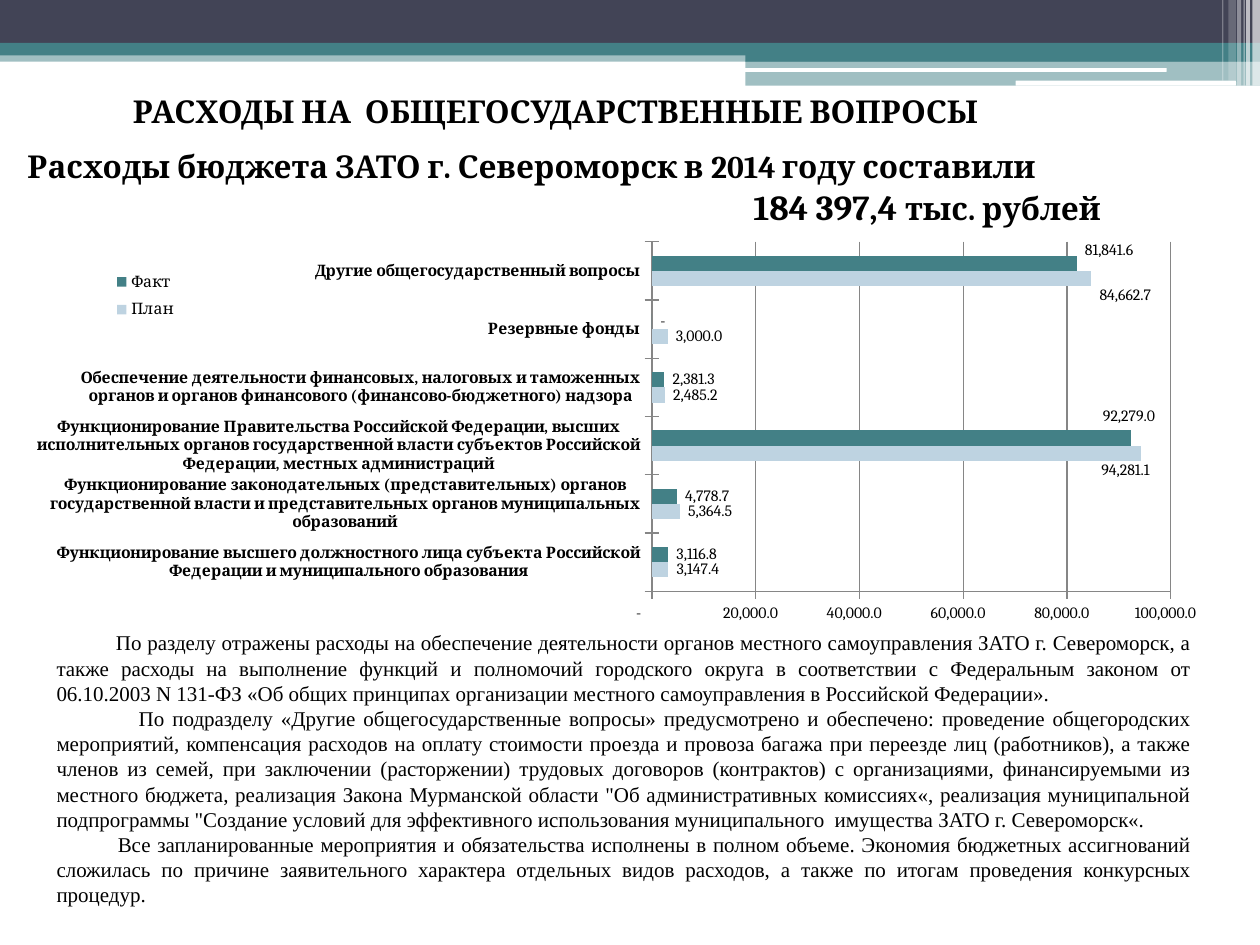
from typing import NamedTuple

from lxml import etree
from pptx import Presentation
from pptx.chart.data import CategoryChartData
from pptx.dml.color import RGBColor
from pptx.enum.chart import XL_CHART_TYPE, XL_LABEL_POSITION, XL_LEGEND_POSITION, XL_TICK_MARK
from pptx.enum.shapes import MSO_SHAPE
from pptx.enum.text import MSO_ANCHOR, PP_ALIGN
from pptx.oxml import parse_xml
from pptx.oxml.ns import nsdecls, qn
from pptx.util import Pt

RECT, ROUND = MSO_SHAPE.RECTANGLE, MSO_SHAPE.ROUNDED_RECTANGLE
LEFT, CENTER, RIGHT, JUSTIFY = PP_ALIGN.LEFT, PP_ALIGN.CENTER, PP_ALIGN.RIGHT, PP_ALIGN.JUSTIFY
CROSS, OUTSIDE = XL_TICK_MARK.CROSS, XL_TICK_MARK.OUTSIDE
OUTSIDE_END = XL_LABEL_POSITION.OUTSIDE_END
COLORS = {"navy": "424456", "teal": "438086", "pale": "BED3E1", "white": "FFFFFF",
          "black": "000000", "grid": "868686"}
SERIF, BODY = "Cambria", "Times New Roman"
NUMBER = '_-* #,##0.0_р_._-;\\-* #,##0.0_р_._-;_-* "-"??_р_._-;_-@_-'


class Band(NamedTuple):
    x: float
    y: float
    w: float
    h: float
    color: str
    alpha: int = 100
    kind: int = RECT


class Series(NamedTuple):
    name: str
    color: str
    values: tuple
    label_shifts: dict  # point index -> shift as a share of the chart


class BodyText(NamedTuple):
    indent: float
    text: str


BANDS = [
    Band(0, 28.8, 720, 6.5, "teal", 50),
    Band(0, 0, 720, 24.5, "navy"),
    Band(0, 24.5, 720, 7.2, "teal"),
    Band(426, 28.1, 294, 7.2, "teal"),
    Band(426, 34.6, 294, 14.4, "teal", 50),
    Band(425.5, 38.9, 241.2, 2.2, "white", 100, ROUND),
    Band(580.3, 46.1, 126, 2.9, "white", 100, ROUND),
    # Light stripes in the corner
    Band(715.7, 0, 4.3, 49, "white", 65),
    Band(712.1, 0, 2.2, 49, "white", 65),
    Band(710.6, 0, 0.7, 49, "white", 60),
    Band(707, 0, 2.2, 49, "white", 40),
    Band(702, 0, 4.3, 46.1, "white", 20),
    Band(698.4, 0, 0.7, 46.1, "white", 30),
]
CATEGORIES = [
    "Функционирование высшего должностного лица субъекта Российской Федерации и муниципального образования",
    "Функционирование законодательных (представительных) органов государственной власти "
    "и представительных органов муниципальных образований",
    "Функционирование Правительства Российской Федерации, высших исполнительных органов "
    "государственной власти субъектов Российской Федерации, местных администраций",
    "Обеспечение деятельности финансовых, налоговых и таможенных органов и органов "
    "финансового (финансово-бюджетного) надзора",
    "Резервные фонды",
    "Другие общегосударственный вопросы",
]
SERIES = [
    Series("План", "pale", (3147.4, 5364.5, 94281.1, 2485.2, 3000, 84662.7),
           {2: (-0.04, 0.04), 5: (0, 0.04)}),
    Series("Факт", "teal", (3116.8, 4778.7, 92279, 2381.3, 0, 81841.6),
           {2: (-0.03, -0.05), 5: (0, -0.03)}),
]
BODY_TEXTS = [
    BodyText(34, "По разделу отражены расходы на обеспечение деятельности органов местного самоуправления "
             "ЗАТО г. Североморск, а также расходы на выполнение функций и полномочий городского округа "
             "в соответствии с Федеральным законом от 06.10.2003 N 131-ФЗ «Об общих принципах организации "
             "местного самоуправления в Российской Федерации»."),
    BodyText(47, "По подразделу «Другие общегосударственные вопросы» предусмотрено и обеспечено: проведение "
             "общегородских мероприятий, компенсация расходов на оплату стоимости проезда и провоза багажа "
             "при переезде лиц (работников), а также членов из семей, при заключении (расторжении) трудовых "
             "договоров (контрактов) с организациями, финансируемыми из местного бюджета, реализация Закона "
             "Мурманской области \"Об административных комиссиях«, реализация муниципальной подпрограммы "
             "\"Создание условий для эффективного использования муниципального  имущества ЗАТО г. Североморск«."),
    BodyText(35, "Все запланированные мероприятия и обязательства исполнены в полном объеме. Экономия бюджетных "
             "ассигнований сложилась по причине заявительного характера отдельных видов расходов, а также "
             "по итогам проведения конкурсных процедур."),
]


def rgb(name: str) -> RGBColor:
    return RGBColor.from_string(COLORS[name])


def draw_band(s, b: Band):
    sp = s.shapes.add_shape(b.kind, Pt(b.x), Pt(b.y), Pt(b.w), Pt(b.h))
    sp.shadow.inherit = False
    sp.fill.solid()
    sp.fill.fore_color.rgb = rgb(b.color)
    sp.line.fill.background()
    if b.alpha < 100:
        color = sp.fill._xPr.find(f".//{qn('a:srgbClr')}")
        etree.SubElement(color, qn("a:alpha"), val=str(b.alpha * 1000))
    return sp


def set_font(font, size: float, bold: bool = False, name: str = SERIF) -> None:
    font.name, font.size, font.bold = name, Pt(size), bold
    font.color.rgb = rgb("black")


def add_run(p, text: str, size: float, bold: bool = True, name: str = SERIF) -> None:
    r = p.add_run()
    r.text = text
    set_font(r.font, size, bold, name)


def add_textbox(s, x: float, y: float, w: float, h: float):
    tf = s.shapes.add_textbox(Pt(x), Pt(y), Pt(w), Pt(h)).text_frame
    tf.word_wrap = True
    return tf


def layout_xml(x: float, y: float, size: tuple = (), inner: bool = False, edge: bool = True):
    parts = ['<c:layoutTarget val="inner"/>'] if inner else []
    if edge:
        parts.append('<c:xMode val="edge"/><c:yMode val="edge"/>')
    values = zip("xywh", (x, y, *size))
    parts += [f'<c:{tag} val="{value}"/>' for tag, value in values]
    return parse_xml(f'<c:layout {nsdecls("c")}><c:manualLayout>{"".join(parts)}</c:manualLayout></c:layout>')


def put_layout(parent, after: str | None, layout) -> None:
    for old in parent.findall(qn("c:layout")):
        parent.remove(old)
    parent.insert(0 if after is None else parent.index(parent.find(qn(after))) + 1, layout)


def style_series(ser, spec: Series) -> None:
    ser.format.fill.solid()
    ser.format.fill.fore_color.rgb = rgb(spec.color)
    ser.invert_if_negative = False
    labels = ser.data_labels
    labels.show_value, labels.position = True, OUTSIDE_END
    labels.number_format, labels.number_format_is_linked = NUMBER, False
    set_font(labels.font, 9)
    for i, (dx, dy) in spec.label_shifts.items():
        label = ser.points[i].data_label
        set_font(label.font, 9)
        label.position = OUTSIDE_END
        d_lbl = ser._element.xpath(f'c:dLbls/c:dLbl[c:idx/@val="{i}"]')[0]
        put_layout(d_lbl, "c:idx", layout_xml(dx, dy, edge=False))
        num_fmt = etree.Element(qn("c:numFmt"), formatCode=NUMBER, sourceLinked="0")
        d_lbl.find(qn("c:layout")).addnext(num_fmt)


def draw_chart(s) -> None:
    data = CategoryChartData(number_format=NUMBER)
    data.categories = CATEGORIES
    for spec in SERIES:
        data.add_series(spec.name, spec.values)
    chart = s.shapes.add_chart(XL_CHART_TYPE.BAR_CLUSTERED, Pt(14.4), Pt(131), Pt(686.2), Pt(245.5), data).chart
    set_font(chart.font, 18)
    chart.has_title = False
    plot = chart.plots[0]
    plot.gap_width, plot.vary_by_categories = 184, False
    for ser, spec in zip(plot.series, SERIES):
        style_series(ser, spec)
    # Axes
    cat, val = chart.category_axis, chart.value_axis
    cat.major_tick_mark, val.major_tick_mark = CROSS, OUTSIDE
    set_font(cat.tick_labels.font, 9, True)
    set_font(val.tick_labels.font, 9)
    val.minimum_scale, val.maximum_scale, val.major_unit = 0, 100000, 20000
    val.tick_labels.number_format, val.tick_labels.number_format_is_linked = NUMBER, False
    val.has_major_gridlines = True
    for part in (cat, val, val.major_gridlines):
        part.format.line.color.rgb = rgb("grid")
        part.format.line.width = Pt(0.75)
    # Legend and plot area
    chart.has_legend = True
    legend = chart.legend
    legend.position, legend.include_in_layout = XL_LEGEND_POSITION.RIGHT, False
    set_font(legend.font, 9)
    put_layout(legend._element, "c:legendPos", layout_xml(0.06, 0.08, (0.08, 0.15)))
    plot_area = chart._chartSpace.chart.plotArea
    put_layout(plot_area, None, layout_xml(0.522, 0.029, (0.432, 0.814), inner=True))


def main() -> None:
    prs = Presentation()
    prs.slide_width, prs.slide_height = Pt(720), Pt(540)
    s = prs.slides.add_slide(prs.slide_layouts[6])
    for band in BANDS:
        draw_band(s, band)
    # Title
    p = add_textbox(s, 14.4, 49, 606.2, 28.8).paragraphs[0]
    p.alignment = CENTER
    add_run(p, "РАСХОДЫ НА  ОБЩЕГОСУДАРСТВЕННЫЕ ВОПРОСЫ", 18)
    # Total spending
    tf = draw_band(s, Band(8.6, 74.9, 635, 64.1, "white")).text_frame
    tf.word_wrap, tf.vertical_anchor = True, MSO_ANCHOR.MIDDLE
    p = tf.paragraphs[0]
    p.alignment = LEFT
    add_run(p, "Расходы бюджета ЗАТО г. Североморск в 2014 году составили", 18)
    p = tf.add_paragraph()
    p.alignment = RIGHT
    p._p.get_or_add_pPr().set("marR", str(Pt(7.4)))
    add_run(p, "184 397,4 ", 20)
    add_run(p, "тыс. рублей", 18)
    draw_chart(s)
    # Explanation
    tf = add_textbox(s, 25.2, 356.4, 663.1, 167)
    for i, item in enumerate(BODY_TEXTS):
        p = tf.add_paragraph() if i else tf.paragraphs[0]
        p.alignment = JUSTIFY
        p._p.get_or_add_pPr().set("indent", str(Pt(item.indent)))
        add_run(p, item.text, 12, False, BODY)
    prs.save("out.pptx")


if __name__ == "__main__":
    main()
